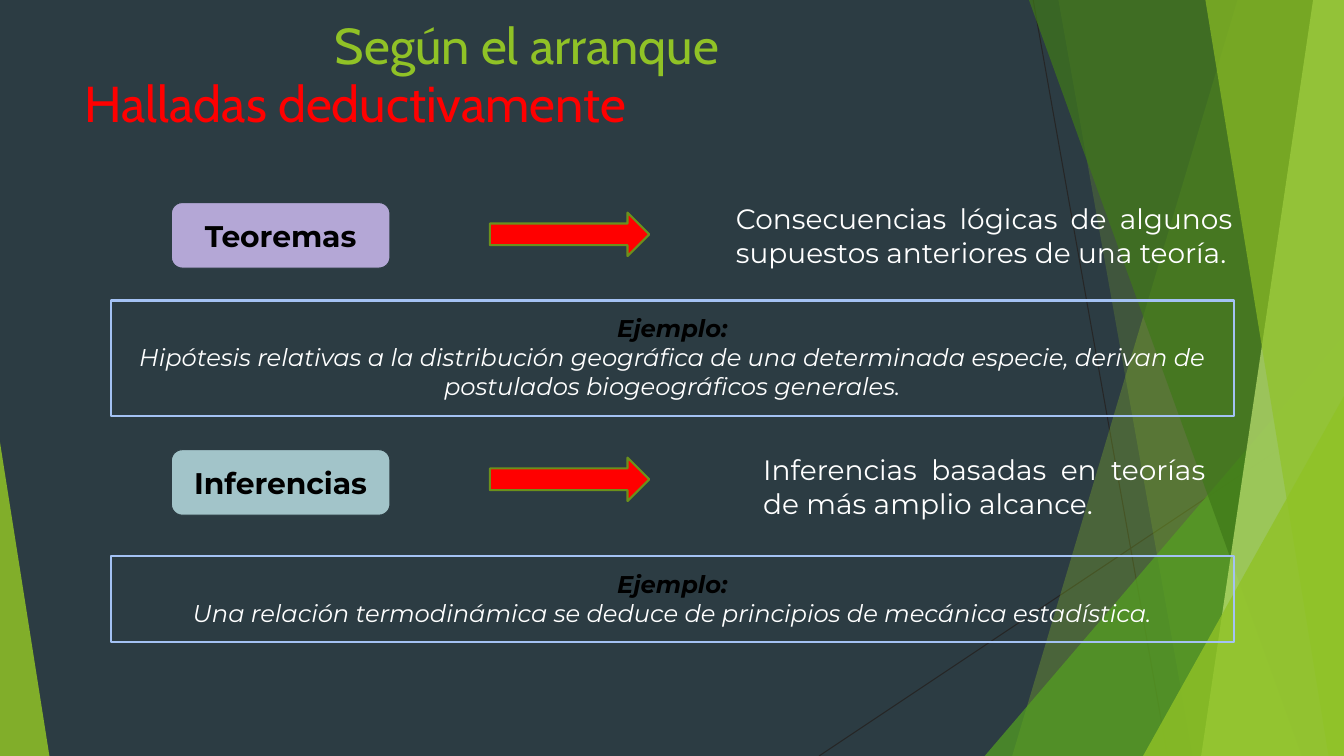
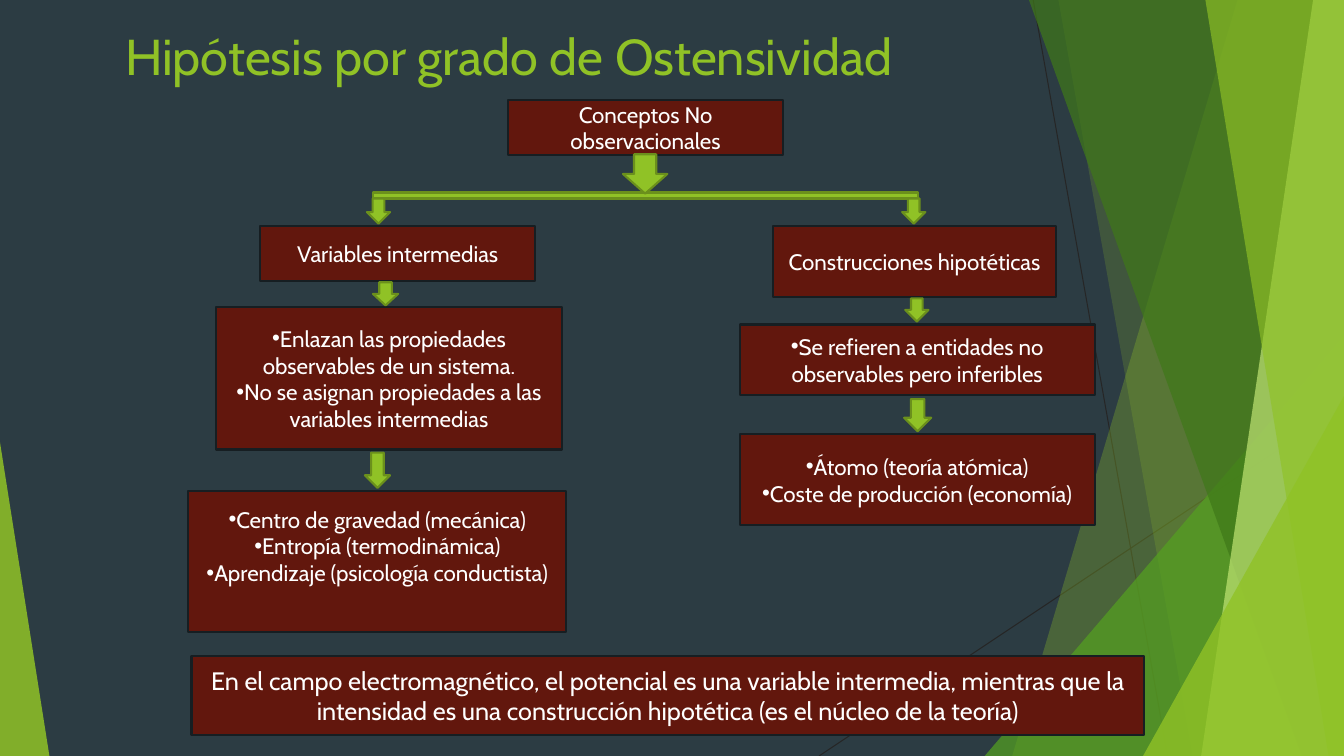
from lxml.etree import SubElement
from pptx import Presentation
from pptx.dml.color import RGBColor
from pptx.enum.shapes import MSO_CONNECTOR as Connector, MSO_SHAPE as Preset
from pptx.enum.text import MSO_ANCHOR as Anchor, MSO_AUTO_SIZE as AutoSize, PP_ALIGN as Align
from pptx.oxml.ns import qn
from pptx.util import Pt

WIDTH, HEIGHT = 960, 540
SLATE = RGBColor(0x2C, 0x3C, 0x43)
GREEN = RGBColor(0x90, 0xC2, 0x26)
MID_GREEN = RGBColor(0x54, 0xA0, 0x21)
DARK_GREEN = RGBColor(0x3F, 0x78, 0x19)
PALE_GREEN = RGBColor(0xC0, 0xE4, 0x74)
OLIVE = RGBColor(0x6B, 0x90, 0x1C)
CHARCOAL = RGBColor(0x26, 0x26, 0x26)
MAROON = RGBColor(0x62, 0x17, 0x0D)
INK = RGBColor(0x16, 0x1E, 0x22)
LILAC = RGBColor(0xB4, 0xA7, 0xD6)
TEAL = RGBColor(0xA2, 0xC4, 0xC9)
SKY = RGBColor(0xA4, 0xC2, 0xF4)
RED = RGBColor(0xFF, 0x00, 0x00)
BLACK = RGBColor(0x00, 0x00, 0x00)
WHITE = RGBColor(0xFF, 0xFF, 0xFF)
TITLE_FONT, BODY_FONT = "Cabin", "Montserrat"
TITLE_SIZE = (676.8, 103.7)
WIDE_INSETS = (9.4, 9.4, 9.4, 9.4)
BOX_INSETS = (7.2, 3.6, 7.2, 3.6)

HAIRLINES = [((738, 0), (834, HEIGHT)), ((WIDTH, 290), (585, HEIGHT))]
FACETS = [
    ("band", (884, 723), GREEN, 30),
    ("band", (756, 852), GREEN, 20),
    ("triangle", (703.4, 239.8, 256.6, 300.2, 1), MID_GREEN, 72),
    ("band", (735, 930), DARK_GREEN, 70),
    ("band", (938, 858), PALE_GREEN, 70),
    ("band", (861, 949), GREEN, 65),
    ("triangle", (816.5, 283, 143.5, 257, 1), GREEN, 80),
    ("triangle", (0, 316, 35.3, 224, 0), GREEN, 85),
]

DEDUCED = [
    {"term": "Teoremas", "color": LILAC, "top": 144.7, "arrow_top": 151.9,
     "meaning": "Consecuencias lógicas de algunos supuestos anteriores de una teoría.",
     "meaning_at": (516.2, 134.6, 373.7, 67.7),
     "example": "Hipótesis relativas a la distribución geográfica de una determinada "
                "especie, derivan de postulados biogeográficos generales.",
     "example_span": (214.6, 82.8)},
    {"term": "Inferencias", "color": TEAL, "top": 321.2, "arrow_top": 326.9,
     "meaning": "Inferencias basadas en teorías de más amplio alcance.",
     "meaning_at": (535.7, 313.9, 334.8, 61.2),
     "example": "Una relación termodinámica se deduce de principios de mecánica estadística.",
     "example_span": (397.4, 61.2)},
]

CONCEPTS = [
    ((362.9, 71.3, 196.6, 39.6), ["Conceptos No observacionales"], {}),
    ((185.8, 161.3, 196.6, 39.6), ["Variables intermedias"], {}),
    ((552.2, 161.6, 202.3, 50.4), ["Construcciones hipotéticas"], {}),
    ((154.1, 219.6, 247.7, 101.5),
     ["Enlazan las propiedades observables de un sistema.",
      "No se asignan propiedades a las variables intermedias"], {"bullet": "•"}),
    ((134.6, 350.6, 270, 100.8),
     ["Centro de gravedad (mecánica)", "Entropía (termodinámica)",
      "Aprendizaje (psicología conductista)"],
     {"bullet": "•", "insets": (7.2, 3.6, 7.2, 25.5)}),
    ((528.5, 231.8, 253.4, 50.4),
     ["Se refieren a entidades no observables pero inferibles"], {"bullet": "•"}),
    ((528.5, 310.3, 253.4, 64.8),
     ["Átomo (teoría atómica)", "Coste de producción (economía)"], {"bullet": "•"}),
    ((136.8, 468.7, 680.4, 56.2),
     ["En el campo electromagnético, el potencial es una variable intermedia, mientras "
      "que la intensidad es una construcción hipotética (es el núcleo de la teoría)"],
     {"size": 18}),
]
BRANCH_BAR = (266.4, 137.5, 389.5, 4.3)
DOWN_ARROWS = [
    (445, 110.2, 31.7, 28.1), (262.1, 141.8, 16.6, 18), (644.4, 141.8, 16.6, 18),
    (266.4, 201.6, 18, 16.6), (260.6, 323.3, 18, 25.2),
    (646.6, 213.1, 16.6, 16.6), (645.8, 285.1, 19.4, 23),
]


def points(values):
    return [Pt(value) for value in values]


def set_fill(shape, color, opacity=100):
    if color is None:
        shape.fill.background()
        return
    shape.fill.solid()
    shape.fill.fore_color.rgb = color
    if opacity < 100:
        tint = shape.element.spPr.find(qn("a:solidFill"))[0]
        SubElement(tint, qn("a:alpha"), val=str(opacity * 1000))


def paint(shape, fill, line=None, weight=1.5, opacity=100):
    shape.shadow.inherit = False
    set_fill(shape, fill, opacity)
    if line is None:
        shape.line.fill.background()
    else:
        shape.line.color.rgb = line
        shape.line.width = Pt(weight)
    return shape


def add_preset(slide, preset, box, fill, line=None, **style):
    return paint(slide.shapes.add_shape(preset, *points(box)), fill, line, **style)


def write_text(shape, paragraphs, font=TITLE_FONT, size=16, color=WHITE, bold=False,
               italic=False, align=Align.CENTER, anchor=Anchor.MIDDLE,
               insets=BOX_INSETS, bullet=None):
    frame = shape.text_frame
    frame.word_wrap = True
    frame.auto_size = AutoSize.NONE
    frame.vertical_anchor = anchor
    (frame.margin_left, frame.margin_top,
     frame.margin_right, frame.margin_bottom) = points(insets)
    for index, entry in enumerate(paragraphs):
        text, changes = entry if isinstance(entry, tuple) else (entry, {})
        paragraph = frame.add_paragraph() if index else frame.paragraphs[0]
        paragraph.alignment = align
        run = paragraph.add_run()
        run.text = text
        run.font.name = font
        run.font.size = Pt(size)
        run.font.color.rgb = changes.get("color", color)
        run.font.bold = changes.get("bold", bold)
        run.font.italic = italic
        if bullet:
            properties = paragraph._p.get_or_add_pPr()
            properties.set("marL", "0")
            properties.set("indent", "0")
            SubElement(properties, qn("a:buFont"), typeface="Arial")
            SubElement(properties, qn("a:buChar"), char=bullet)


def write_heading(shape, text, left, top, color=GREEN, align=Align.LEFT):
    shape.left, shape.top, shape.width, shape.height = points((left, top, *TITLE_SIZE))
    write_text(shape, [text], size=36, color=color, align=align, anchor=Anchor.TOP)


def add_text_box(slide, box):
    return slide.shapes.add_textbox(*points(box))


def add_hairline(slide, start, end):
    line = slide.shapes.add_connector(Connector.STRAIGHT, *points((*start, *end)))
    line.line.color.rgb = CHARCOAL
    line.line.width = Pt(0.75)
    SubElement(line.element.spPr, qn("a:effectLst"))
    return line


def add_facet(slide, kind, geometry, color, opacity):
    if kind == "triangle":
        *box, apex = geometry
        facet = add_preset(slide, Preset.ISOSCELES_TRIANGLE, box, color, opacity=opacity)
        facet.adjustments[0] = apex
        return facet
    top_left, bottom_left = geometry
    outline = slide.shapes.build_freeform(Pt(top_left), Pt(0))
    corners = [(WIDTH, 0), (WIDTH, HEIGHT), (bottom_left, HEIGHT)]
    outline.add_line_segments([points(corner) for corner in corners], close=True)
    return paint(outline.convert_to_shape(), color, opacity=opacity)


def decorate_master(presentation, slide):
    master = presentation.slide_master
    master.background.fill.solid()
    master.background.fill.fore_color.rgb = SLATE
    decorations = [add_hairline(slide, *ends) for ends in HAIRLINES]
    decorations += [add_facet(slide, *facet) for facet in FACETS]
    for number, shape in enumerate(decorations, 101):
        shape.element.xpath(".//p:cNvPr")[0].set("id", str(number))
        master.shapes.element.append(shape.element)


def build_deduced(slide):
    write_heading(slide.shapes.title, "Halladas deductivamente", 53.3, 48.2, color=RED)
    heading = add_text_box(slide, (0, 0, *TITLE_SIZE))
    write_heading(heading, "Según el arranque", 38, 6.5, align=Align.CENTER)
    for row in DEDUCED:
        pill = add_preset(slide, Preset.ROUNDED_RECTANGLE, (122.4, row["top"], 156.2, 46.8),
                          row["color"], SLATE, weight=0.75)
        write_text(pill, [row["term"]], font=BODY_FONT, size=21.3, color=BLACK,
                   bold=True, insets=WIDE_INSETS)
        add_preset(slide, Preset.RIGHT_ARROW, (349.9, row["arrow_top"], 113.8, 31), RED, OLIVE)
        write_text(add_text_box(slide, row["meaning_at"]), [row["meaning"]], font=BODY_FONT,
                   size=20, align=Align.JUSTIFY, anchor=Anchor.TOP, insets=WIDE_INSETS)
        top, height = row["example_span"]
        example = add_preset(slide, Preset.RECTANGLE, (79.2, top, 802, height), None, SKY)
        write_text(example, [("Ejemplo:", {"color": BLACK, "bold": True}), row["example"]],
                   font=BODY_FONT, size=17.3, italic=True, anchor=Anchor.TOP,
                   insets=WIDE_INSETS)


def build_concepts(slide):
    write_heading(slide.shapes.title, "Hipótesis por grado de Ostensividad", 82.1, 14.4)
    for box, paragraphs, style in CONCEPTS:
        concept = add_preset(slide, Preset.RECTANGLE, box, MAROON, INK)
        write_text(concept, paragraphs, **style)
    add_preset(slide, Preset.RECTANGLE, BRANCH_BAR, GREEN, OLIVE)
    for box in DOWN_ARROWS:
        add_preset(slide, Preset.DOWN_ARROW, box, GREEN, OLIVE)


def main():
    presentation = Presentation()
    presentation.slide_width, presentation.slide_height = Pt(WIDTH), Pt(HEIGHT)
    title_only = presentation.slide_layouts[5]
    slides = [presentation.slides.add_slide(title_only) for _ in range(2)]
    decorate_master(presentation, slides[0])
    build_deduced(slides[0])
    build_concepts(slides[1])
    presentation.save("out.pptx")


if __name__ == "__main__":
    main()
